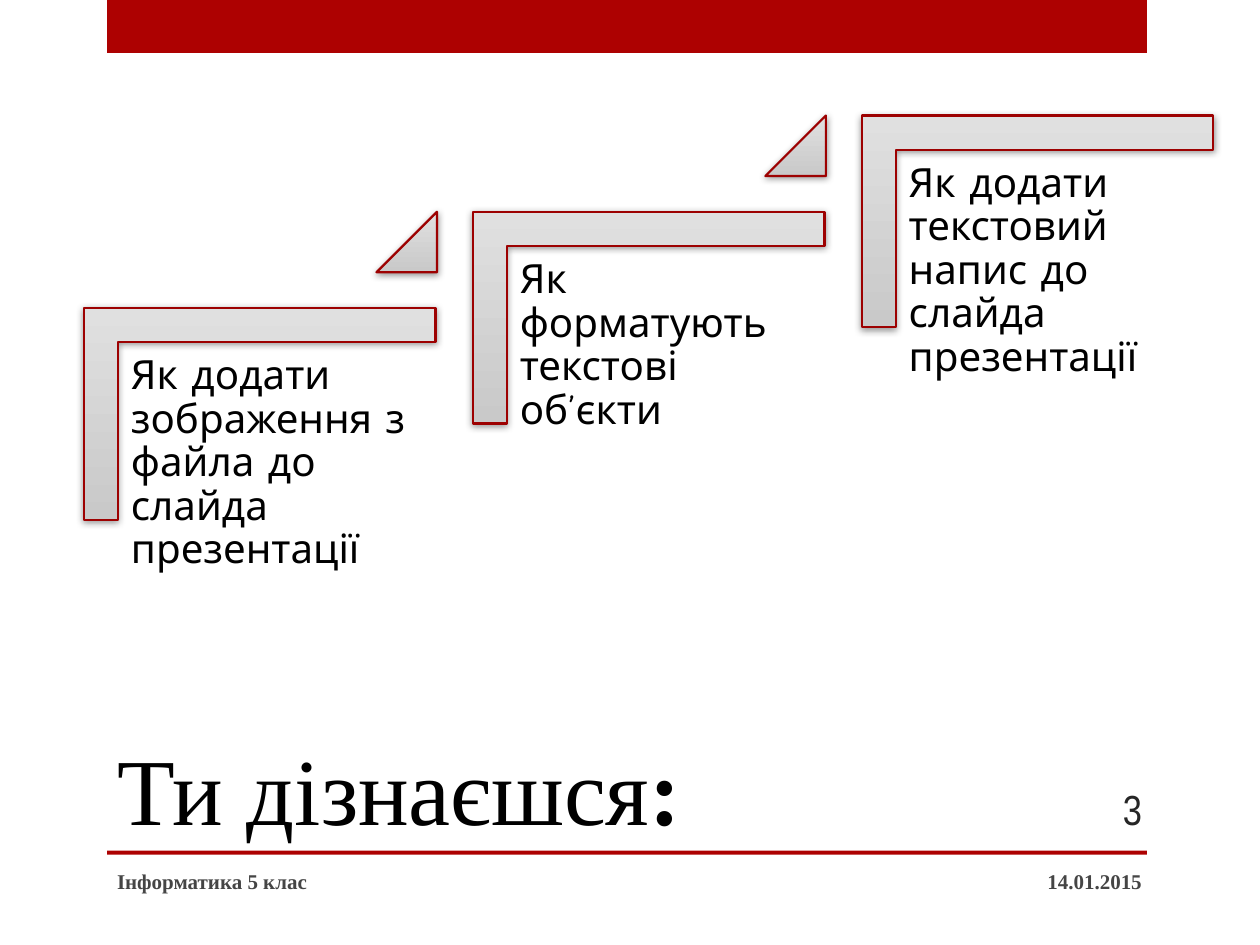
from lxml import etree
from pptx import Presentation
from pptx.dml.color import RGBColor
from pptx.enum import shapes, text
from pptx.oxml import parse_xml
from pptx.util import Cm, Pt

HEX = {"red": "AD0101", "edge": "9D0101", "light": "E0E0E0", "dark": "C9C9C9",
       "black": "000000", "gray": "454545", "page": "262626"}
SERIF = "Times New Roman"
NS = "http://schemas.openxmlformats.org/drawingml/2006/main"
SHADOW = (f'<a:effectLst xmlns:a="{NS}"><a:outerShdw blurRad="50800" dist="12700" '
          'dir="5280000" rotWithShape="0"><a:srgbClr val="000000">'
          '<a:alpha val="40000"/></a:srgbClr></a:outerShdw></a:effectLst>')
STEPS = ["Як додати зображення з файла до слайда презентації",
         "Як форматують текстові об’єкти",
         "Як додати текстовий напис до слайда презентації"]
STEP_X, STEP_Y = 7.84, -1.94


def color(name):
    return RGBColor.from_string(HEX[name])


class Deck:
    """Holds the style and the current slide; lengths are in centimetres."""

    def __init__(self):
        self.prs = Presentation()
        self.prs.slide_width, self.prs.slide_height = Cm(25.4), Cm(19.05)
        self.slide = self.prs.slides.add_slide(self.prs.slide_layouts[5])

    def font(self, run, size, face, ink, bold=False):
        run.font.size, run.font.name, run.font.bold = Pt(size), face, bold
        run.font.color.rgb = color(ink)

    def title(self, box, words, mark):
        """Set the title, with its closing mark in bold."""
        shape = self.slide.shapes.title
        shape.left, shape.top, shape.width, shape.height = map(Cm, box)
        frame = shape.text_frame
        frame.vertical_anchor = text.MSO_ANCHOR.BOTTOM
        para = frame.paragraphs[0]
        para.alignment = text.PP_ALIGN.LEFT
        for part, bold in ((words, False), (mark, True)):
            run = para.add_run()
            run.text = part
            self.font(run, 54, SERIF, "black", bold)

    def label(self, box, words, size, face, ink, bold=False, right=False):
        frame = self.slide.shapes.add_textbox(*map(Cm, box)).text_frame
        frame.word_wrap = True
        frame.vertical_anchor = text.MSO_ANCHOR.MIDDLE
        frame.text = words
        para = frame.paragraphs[0]
        para.alignment = text.PP_ALIGN.RIGHT if right else text.PP_ALIGN.LEFT
        self.font(para.runs[0], size, face, ink, bold)
        return frame

    def step(self, box, words):
        frame = self.label(box, words, 23, "Comic Neue", "black")
        frame.vertical_anchor = text.MSO_ANCHOR.TOP
        frame.margin_top = frame.margin_bottom = Cm(0.25)
        frame.paragraphs[0].line_spacing = 0.9

    def bar(self, box):
        shape = self.slide.shapes.add_shape(shapes.MSO_SHAPE.RECTANGLE, *map(Cm, box))
        shape.shadow.inherit = False
        shape.fill.solid()
        shape.fill.fore_color.rgb = color("red")
        shape.line.fill.background()

    def metal(self, kind, box, adjust, turn=0):
        """Add a grey gradient shape with a red edge and a soft shadow."""
        shape = self.slide.shapes.add_shape(kind, *map(Cm, box))
        shape.rotation = turn
        for i, value in enumerate(adjust):
            shape.adjustments[i] = value
        shape.fill.gradient()
        shape.fill.gradient_angle = 270
        for stop, name in zip(shape.fill.gradient_stops, ("light", "dark")):
            stop.color.rgb = color(name)
        props = shape.element.spPr
        props.find(f"{{{NS}}}gradFill").set("rotWithShape", "0")
        shape.line.color.rgb = color("edge")
        shape.line.width = Pt(1.25)
        props.append(parse_xml(SHADOW))


def main():
    deck = Deck()
    deck.bar((2.16, 0, 20.96, 1.07))
    deck.bar((2.16, 17.15, 20.96, 0.08))
    deck.title((2.11, 12.7, 18.85, 4.45), "Ти дізнаєшся", ":")
    deck.label((17.35, 17.25, 5.92, 1.02), "14.01.2015", 12, SERIF, "gray", True, True)
    deck.label((2.11, 17.25, 13.54, 1.02), "Інформатика 5 клас", 12, SERIF, "gray", True)
    deck.label((21.16, 15.8, 2.11, 1.02), "3", 24, "Arial Narrow", "page", right=True)
    for i, words in enumerate(STEPS):
        x, y = i * STEP_X, i * STEP_Y
        deck.metal(shapes.MSO_SHAPE.CORNER, (3.1 + x, 4.8 + y, 4.27, 7.09),
                   (0.161, 0.161), 90)
        deck.step((2.39 + x, 6.91 + y, 6.4, 5.61), words)
        if i < len(STEPS) - 1:
            deck.metal(shapes.MSO_SHAPE.ISOSCELES_TRIANGLE,
                       (7.59 + x, 4.27 + y, 1.22, 1.22), (1,))
    deck.prs.save("out.pptx")


if __name__ == "__main__":
    main()
